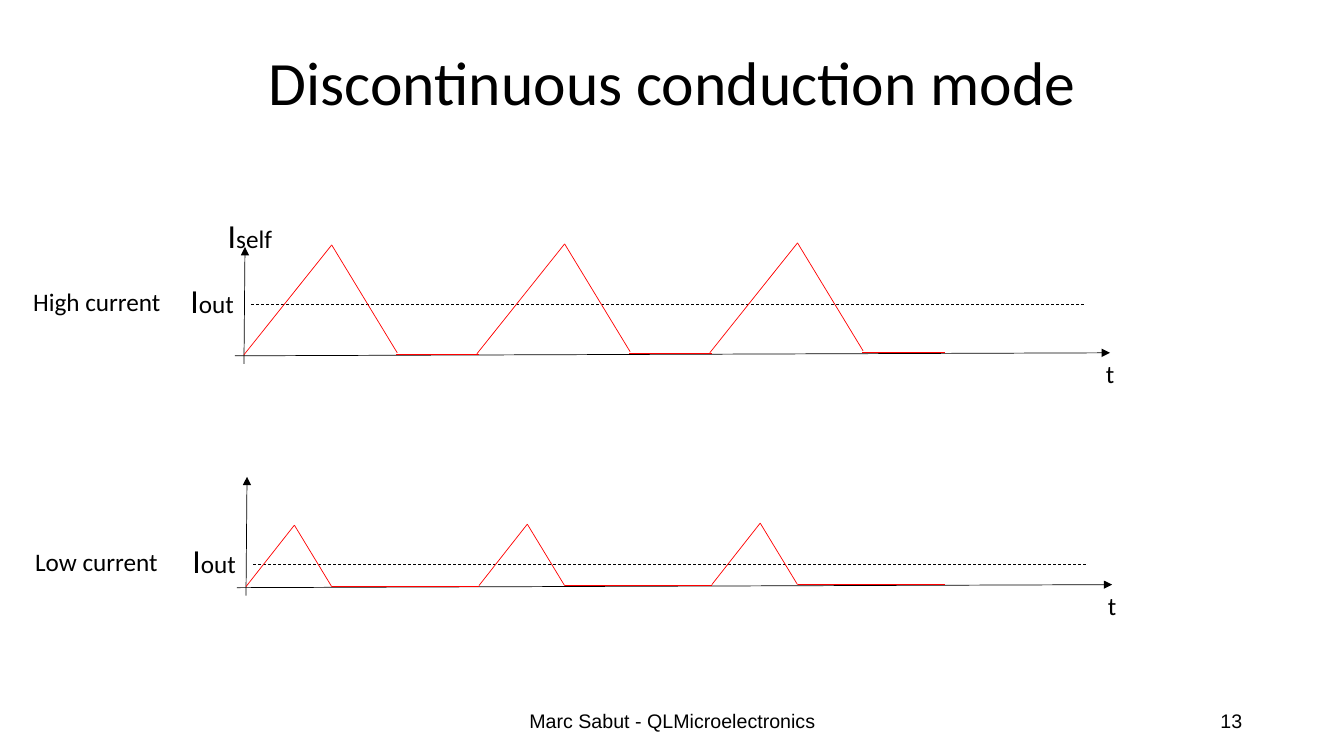
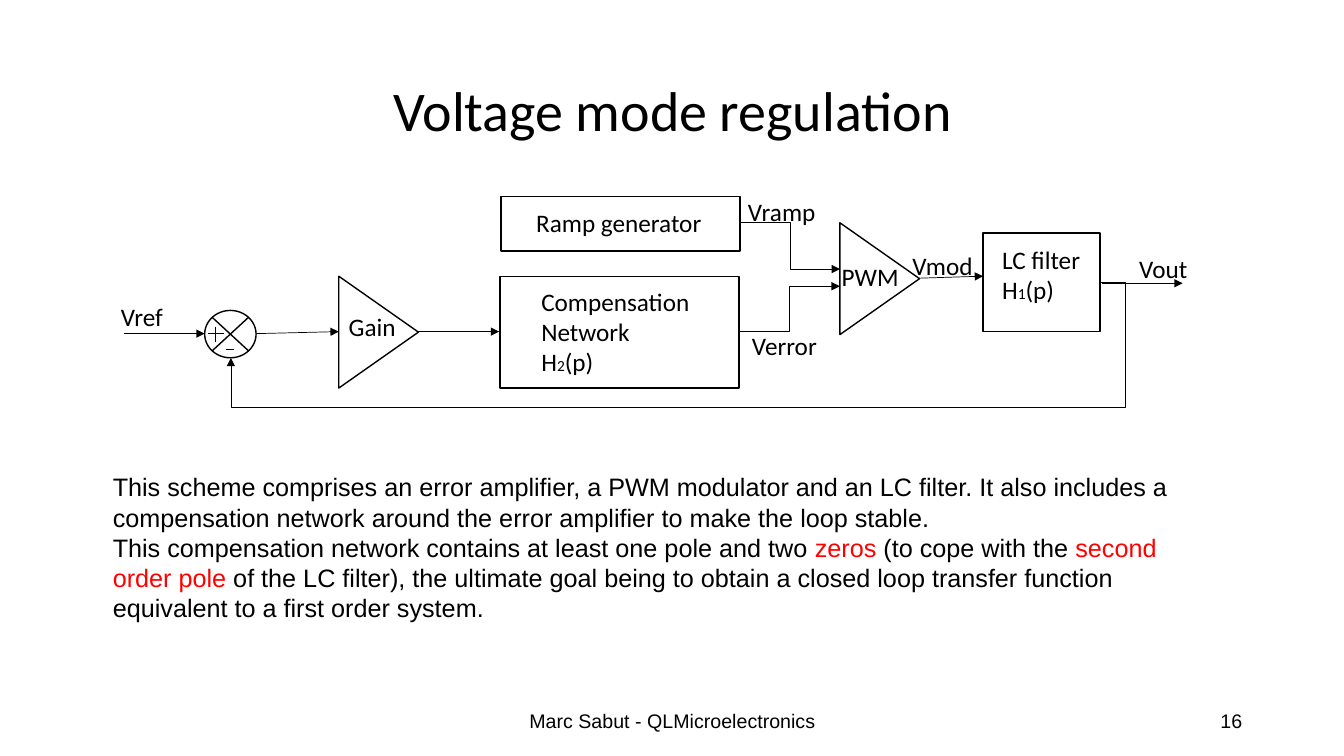
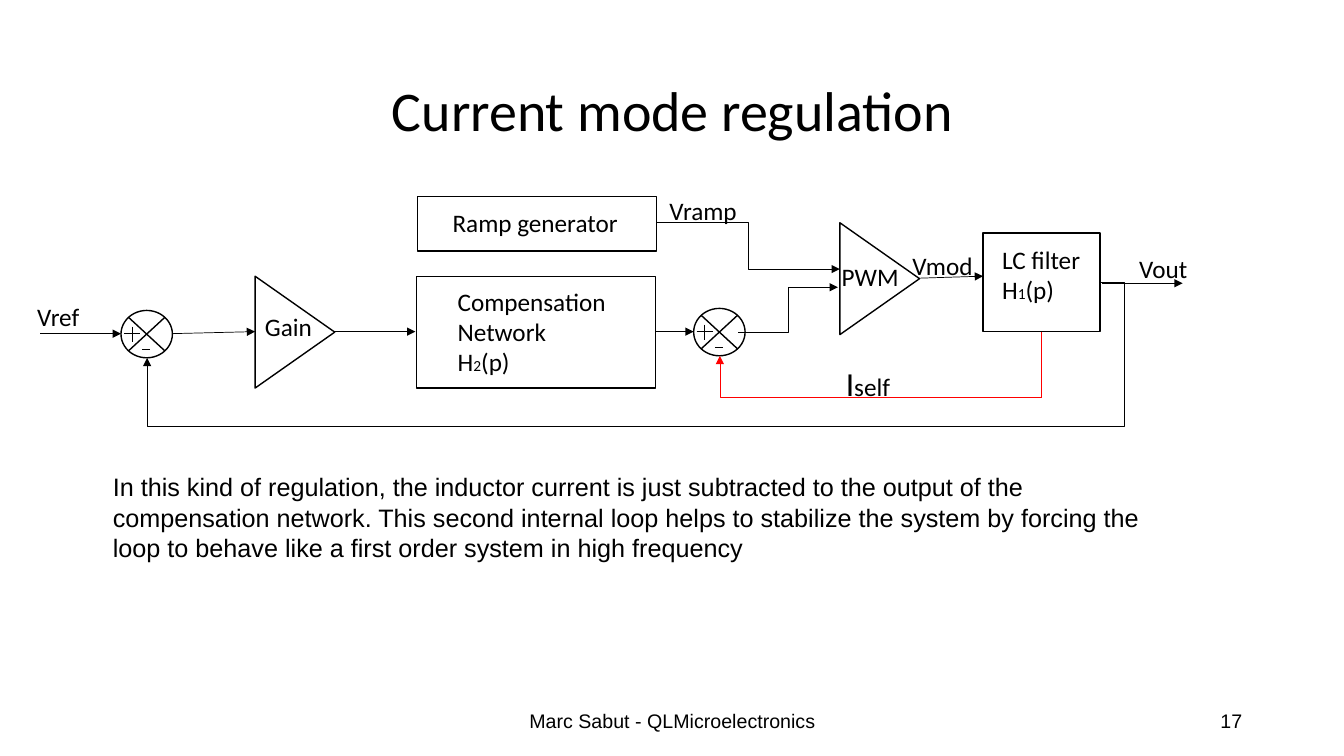
from lxml import etree
from pptx import Presentation
from pptx.dml.color import RGBColor
from pptx.enum.dml import MSO_LINE
from pptx.enum.shapes import MSO_CONNECTOR, MSO_SHAPE
from pptx.enum.text import MSO_ANCHOR, MSO_AUTO_SIZE, PP_ALIGN
from pptx.oxml.ns import qn
from pptx.util import Pt

PX = 9144  # 100 px to the inch
BLACK, RED, WHITE = "000000", "FF0000", "FFFFFF"
STRAIGHT, ELBOW = MSO_CONNECTOR.STRAIGHT, MSO_CONNECTOR.ELBOW
DASH = MSO_LINE.DASH
RECT, TRIANGLE = MSO_SHAPE.RECTANGLE, MSO_SHAPE.ISOSCELES_TRIANGLE
SUM = MSO_SHAPE.FLOWCHART_SUMMING_JUNCTION
LEFT, CENTER, RIGHT = PP_ALIGN.LEFT, PP_ALIGN.CENTER, PP_ALIGN.RIGHT
TOP, MIDDLE = MSO_ANCHOR.TOP, MSO_ANCHOR.MIDDLE
FIT, FIXED = MSO_AUTO_SIZE.SHAPE_TO_FIT_TEXT, MSO_AUTO_SIZE.NONE
rgb = RGBColor.from_string


def label(slide, x, y, w, h, paras, size=18, face="Calibri",
          align=LEFT, anchor=TOP, wrap=False, fit=FIT):
    """Add text; a paragraph is a list of (text, size, colour) runs."""
    box = slide.shapes.add_textbox(x * PX, y * PX, w * PX, h * PX)
    frame = box.text_frame
    frame.word_wrap, frame.auto_size = wrap, fit
    frame.vertical_anchor = anchor
    for i, runs in enumerate(paras):
        para = frame.paragraphs[0] if i == 0 else frame.add_paragraph()
        para.alignment = align
        para.font.name, para.font.size = face, Pt(size)
        para.font.color.rgb = rgb(BLACK)
        for text, pts, hue in runs:
            run = para.add_run()
            run.text = text
            if pts:
                run.font.size = Pt(pts)
            if hue:
                run.font.color.rgb = rgb(hue)
    return box


def wire(slide, x1, y1, x2, y2, hue=BLACK, head=False, kind=STRAIGHT):
    """Add a thin line, with an arrowhead at its end if asked."""
    line = slide.shapes.add_connector(kind, x1 * PX, y1 * PX, x2 * PX, y2 * PX)
    line.line.width = Pt(0.5)
    line.line.color.rgb = rgb(hue)
    props = line._element.spPr
    if head:
        etree.SubElement(props.find(qn("a:ln")), qn("a:tailEnd"), type="triangle")
    etree.SubElement(props, qn("a:effectLst"))
    return line


deck = Presentation()
deck.slide_width, deck.slide_height = 1333 * PX, 750 * PX

# Title and footer of every slide
slides = []
for title, size, high, page in [
    ("Discontinuous conduction mode", 44, 89, "13"),
    ("Voltage mode regulation", 40, 145, "16"),
    ("Current mode regulation", 40, 145, "17"),
]:
    slide = deck.slides.add_slide(deck.slide_layouts[6])
    slides.append(slide)
    label(slide, 442, 695, 450, 40, [[("Marc Sabut - QLMicroelectronics", None, None)]],
          14, "Arial", CENTER, MIDDLE, True, FIXED)
    label(slide, 942, 695, 300, 40, [[(page, None, None)]],
          14, "Arial", RIGHT, MIDDLE, True, FIXED)
    head = label(slide, 92, 40, 1150, high, [[(title, None, None)]],
                 size, "Calibri", CENTER, MIDDLE, True, FIXED)
    head.text_frame.paragraphs[0].line_spacing = 0.9

# Current waveforms: axes, mean level and three pulses each
slide = slides[0]
I_SELF = [[("I", 24, None), ("self", None, None)]]
I_OUT = [[("I", 24, None), ("out", None, None)]]
label(slide, 216, 208, 65, 47, I_SELF)
for name, nx, ny, nw, left, base, top, mean, peak, fall, flat in [
    ("High current", 23, 279, 148, 242, 352, 245, 302, (87, -109), (152, -2), (151, 233)),
    ("Low current", 25, 537, 143, 244, 582, 473, 560, (48, -61), (85, 0), (85, 231)),
]:
    wire(slide, left, base + 9, left + 1, top, head=True)
    wire(slide, left + 7, mean, left + 835, mean).line.dash_style = DASH
    wire(slide, left - 9, base + 1, left + 859, base - 2, head=True)
    label(slide, left - 63, mean - 29, 64, 47, I_OUT)
    label(slide, left + 845, base - 1, 29, 40, [[("t", None, None)]])
    label(slide, nx, ny, nw, 40, [[(name, None, None)]])
    for i in range(3):
        x, y = left + 231 * i, base - i
        px, py = x + peak[0], y + peak[1]
        wire(slide, x, y, px, py, RED)
        wire(slide, px, py, x + fall[0], y + fall[1], RED)
        wire(slide, x + flat[0], y, x + flat[1], y, RED)

# Control loops: the front end moves left to make room for a second sum
for slide, dx, drop, sums in [
    (slides[1], 0, 1.654, [(203, 308)]),
    (slides[2], -83, 1.905, [(120, 308), (688, 306)]),
]:
    # Blocks
    blocks = [
        (RECT, 496 + dx, 274, 237, 111, 0),
        (RECT, 497 + dx, 195, 237, 54, 0),
        (RECT, 975, 231, 116, 98, 0),
        (TRIANGLE, 320 + dx, 290, 111, 79, 90),
        (TRIANGLE, 817, 237, 111, 79, 90),
    ]
    blocks += [(SUM, x, y, 51, 47, 0) for x, y in sums]
    for form, x, y, w, h, turn in blocks:
        block = slide.shapes.add_shape(form, x * PX, y * PX, w * PX, h * PX)
        block.shadow.inherit = False
        block.rotation = turn
        block.fill.solid()
        block.fill.fore_color.rgb = rgb(WHITE)
        block.line.color.rgb = rgb(BLACK)
        block.line.width = Pt(1)

    # Plus and minus signs
    for x, y in sums:
        wire(slide, x + 11, y + 16, x + 11, y + 31)
        wire(slide, x + 3, y + 23, x + 19, y + 23)
        wire(slide, x + 21, y + 39, x + 29, y + 39)

    # Straight arrows
    for x1, y1, x2, y2 in [
        (123 + dx, 331, 203 + dx, 331),
        (254 + dx, 331, 336 + dx, 329),
        (414 + dx, 329, 495 + dx, 329),
        (911, 276, 975, 274),
        (1093, 281, 1173, 281),
    ]:
        wire(slide, x1, y1, x2, y2, head=True)

    # Ramp arrow and outer feedback
    wire(slide, 734 + dx, 221, 833, 267, head=True, kind=ELBOW)
    back = wire(slide, 1091, 280, 229 + dx, 355, head=True, kind=ELBOW)
    form = back._element.spPr.find(qn("a:prstGeom"))
    form.set("prst", "bentConnector4")
    guides = form.find(qn("a:avLst"))
    if guides is None:
        guides = etree.SubElement(form, qn("a:avLst"))
    for name, ratio in [("adj1", -25 / (862 - dx)), ("adj2", drop)]:
        etree.SubElement(guides, qn("a:gd"), name=name,
                         fmla=f"val {round(ratio * 100000)}")

    # Names of blocks and signals
    for text, x, y, w in [
        ("Gain", 336 + dx, 304, 67),
        ("Ramp generator", 522 + dx, 201, 186),
        ("PWM", 825, 254, 77),
        ("Vmod", 895, 243, 81),
        ("Vout", 1120, 246, 69),
        ("Vref", 110 + dx, 294, 63),
    ]:
        label(slide, x, y, w, 40, [[(text, None, None)]])
    for rows, sub, x, y, w, h in [
        (["Compensation", "Network"], "2", 527 + dx, 279, 175, 101),
        (["LC filter"], "1", 984, 237, 99, 71),
    ]:
        paras = [[(row, None, None)] for row in rows]
        paras.append([("H", None, None), (sub, 11, None), ("(p)", None, None)])
        label(slide, x, y, w, h, paras)

# Voltage mode: error signal straight to the modulator
slide = slides[1]
wire(slide, 733, 329, 833, 284, head=True, kind=ELBOW)
label(slide, 732, 190, 88, 40, [[("Vramp", None, None)]])
label(slide, 736, 323, 85, 40, [[("Verror", None, None)]])

# Current mode: inner loop through the second sum
slide = slides[2]
wire(slide, 650, 329, 688, 329, head=True)
wire(slide, 732, 330, 831, 285, head=True, kind=ELBOW)
inner = wire(slide, 714, 353, 1033, 394, RED, True, ELBOW)
inner._element.spPr.find(qn("a:prstGeom")).set("prst", "bentConnector2")
inner._element.spPr.find(qn("a:xfrm")).set("rot", "10800000")
wire(slide, 1033, 394, 1033, 329, RED)
label(slide, 654, 189, 88, 40, [[("Vramp", None, None)]])
label(slide, 829, 355, 65, 50, I_SELF)

# Explanations
for slide, high, paras in [
    (slides[1], 162, [
        [("This scheme comprises an error amplifier, a PWM modulator and an LC "
          "filter. It also includes a compensation network around the error "
          "amplifier to make the loop stable.", None, None)],
        [("This compensation network contains at least one pole and two ", None, None),
         ("zeros", None, RED),
         (" (to cope with the ", None, None),
         ("second order pole", None, RED),
         (" of the LC filter), the ultimate goal being to obtain a closed loop "
          "transfer function equivalent to a first order system.", None, None)],
    ]),
    (slides[2], 101, [
        [("In this kind of regulation, the inductor current is just subtracted to "
          "the output of the compensation network. This second internal loop helps "
          "to stabilize the system by forcing the loop to behave like a first order "
          "system in high frequency", None, None)],
    ]),
]:
    note = label(slide, 102, 463, 1071, high, paras, face="Arial", wrap=True)
    note.fill.solid()
    note.fill.fore_color.rgb = rgb(WHITE)

deck.save("out.pptx")
